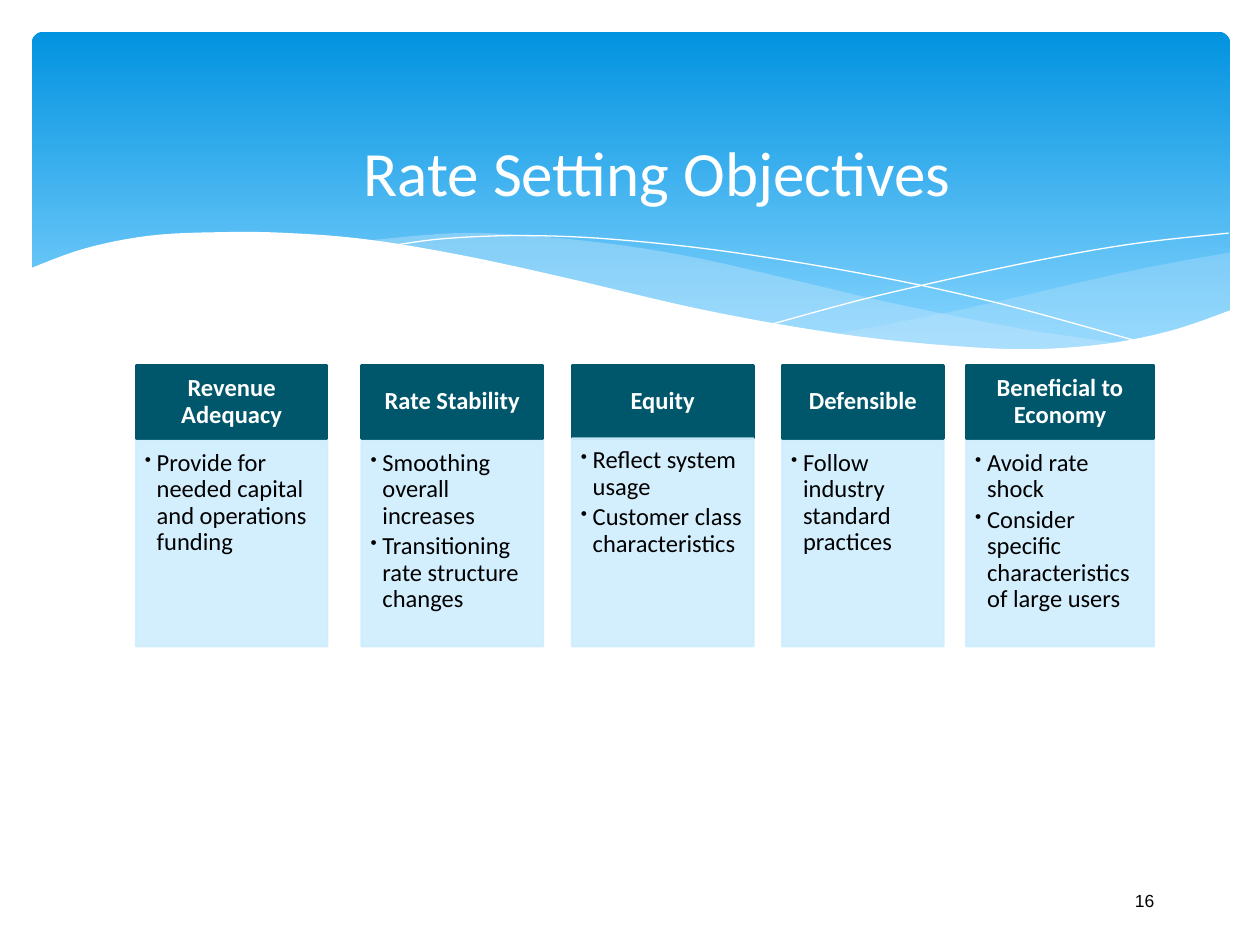
from lxml import etree
from pptx import Presentation
from pptx.dml.color import RGBColor
from pptx.enum.shapes import MSO_SHAPE
from pptx.enum.text import MSO_ANCHOR, PP_ALIGN
from pptx.oxml.ns import qn
from pptx.util import Cm, Pt

CENTER, LEFT = PP_ALIGN.CENTER, PP_ALIGN.LEFT
TOP, MIDDLE, BOTTOM = MSO_ANCHOR.TOP, MSO_ANCHOR.MIDDLE, MSO_ANCHOR.BOTTOM

WHITE = RGBColor(0xFF, 0xFF, 0xFF)
BLACK = RGBColor(0x00, 0x00, 0x00)
SKY_DARK = RGBColor(0x02, 0x93, 0xE0)
SKY_LIGHT = RGBColor(0x83, 0xD3, 0xFE)
WAVE = RGBColor(0xC6, 0xE7, 0xFC)
TEAL = RGBColor(0x00, 0x57, 0x6C)
PALE = RGBColor(0xCF, 0xED, 0xFD)

# Curves hold points in cm from the top left corner of the banner.
RIGHT_WAVE = [
    [(24.16, 4.45), (22.76, 4.7), (21.23, 5.03), (19.15, 5.51), (17.3, 5.89),
     (16.15, 6.1)],
    [(16.15, 6.1), (17.27, 6.25), (18.59, 6.38), (20.04, 6.43), (21.51, 6.32),
     (22.94, 6.05), (24.16, 5.64)],
]
LEFT_WAVE = [
    [(22.05, 6.3), (19.86, 5.97), (17.3, 5.46), (15.34, 5), (13.46, 4.57),
     (11.79, 4.29), (10.03, 4.11), (8.53, 4.06), (6.63, 4.22)],
    [(6.63, 4.22), (8.56, 4.52), (10.77, 5), (13.74, 5.66), (15.88, 6.07),
     (17.7, 6.32), (19.58, 6.43), (20.9, 6.4), (22.05, 6.3)],
]
FALLING_LINE = [
    [(7.21, 4.32), (8.33, 4.17), (9.93, 4.11), (11.79, 4.19), (14.15, 4.45),
     (17.02, 4.93), (19.56, 5.49), (22.4, 6.27)],
]
RISING_LINE = [
    [(14.94, 5.89), (17.02, 5.33), (19.84, 4.7), (22.1, 4.29), (24.13, 4.06)],
]
WHITE_WAVE = [
    [(24.18, 5.61), (22.99, 6.02), (21.59, 6.3), (19.91, 6.4), (17.81, 6.27),
     (15.82, 6.02), (13.46, 5.59), (10.72, 4.95), (8.64, 4.5), (6.78, 4.19),
     (5.21, 4.06), (3.86, 4.04), (2.39, 4.11), (1.07, 4.37), (-0.05, 4.78)],
    [(-0.05, 7.72), (24.18, 7.72)],
]

# Left, width, body top, heading, bullets
OBJECTIVES = [
    (2.74, 3.86, 8.89, "Revenue Adequacy",
     ["Provide for needed capital and operations funding"]),
    (7.29, 3.66, 8.89, "Rate Stability",
     ["Smoothing overall increases", "Transitioning rate structure changes"]),
    (11.53, 3.66, 8.84, "Equity",
     ["Reflect system usage", "Customer class characteristics"]),
    (15.77, 3.25, 8.89, "Defensible",
     ["Follow industry standard practices"]),
    (19.48, 3.78, 8.89, "Beneficial to Economy",
     ["Avoid rate shock", "Consider specific characteristics of large users"]),
]
HEAD_TOP, HEAD_HEIGHT, BODY_BOTTOM = 7.37, 1.47, 13.03


def smooth_curve(knots, steps=6):
    """Return points on a Catmull-Rom spline through the knots."""
    ends = [knots[0], *knots, knots[-1]]
    points = [knots[0]]
    for a, b, c, d in zip(ends, ends[1:], ends[2:], ends[3:]):
        for i in range(1, steps + 1):
            t = i / steps
            points.append(tuple(
                (2 * q + (r - p) * t + (2 * p - 5 * q + 4 * r - s) * t ** 2
                 + (3 * q - p - 3 * r + s) * t ** 3) / 2
                for p, q, r, s in zip(a, b, c, d)))
    return points


def set_alpha(fill_parent, percent):
    color = fill_parent.find(qn("a:solidFill")).find(qn("a:srgbClr"))
    etree.SubElement(color, qn("a:alpha"), val=str(percent * 1000))


def add_curves(s, left, top, curves, fill=None, alpha=100):
    """Draw a filled outline, or an open white hairline when fill is None."""
    points = [(Cm(x), Cm(y)) for c in curves for x, y in smooth_curve(c)]
    builder = s.shapes.build_freeform(*points[0], scale=1.0)
    builder.add_line_segments(points[1:], close=fill is not None)
    sp = builder.convert_to_shape(Cm(left), Cm(top))
    sp.shadow.inherit = False
    if fill is None:
        sp.fill.background()
        sp.line.color.rgb = WHITE
        sp.line.width = Pt(0)
        return
    sp.fill.solid()
    sp.fill.fore_color.rgb = fill
    sp.line.fill.background()
    if alpha < 100:
        set_alpha(sp._element.spPr, alpha)


def add_banner(s, left, top, width, height):
    sp = s.shapes.add_shape(MSO_SHAPE.ROUNDED_RECTANGLE, Cm(left), Cm(top),
                            Cm(width), Cm(height))
    sp.adjustments[0] = 0.034
    sp.shadow.inherit = False
    sp.line.fill.background()
    sp.fill.gradient()
    sp.fill.gradient_angle = 270
    stops = [(0, SKY_DARK), (0.9, SKY_LIGHT)]
    for stop, (position, color) in zip(sp.fill.gradient_stops, stops):
        stop.position = position
        stop.color.rgb = color
    add_curves(s, left, top, RIGHT_WAVE, WAVE, 29)
    add_curves(s, left, top, LEFT_WAVE, WAVE, 40)
    add_curves(s, left, top, FALLING_LINE)
    add_curves(s, left, top, RISING_LINE)
    add_curves(s, left, top, WHITE_WAVE, WHITE)


def set_text(sp, lines, font, align, anchor, insets=(0.25, 0.13, 0.25, 0.13),
             **spacing):
    tf = sp.text_frame
    frame = dict(zip(("margin_left", "margin_top", "margin_right",
                      "margin_bottom"), map(Cm, insets)))
    frame.update(word_wrap=True, vertical_anchor=anchor)
    for name, value in frame.items():
        setattr(tf, name, value)
    for i, line in enumerate(lines):
        p = tf.add_paragraph() if i else tf.paragraphs[0]
        p.alignment = align
        for name, value in spacing.items():
            setattr(p, name, value)
        r = p.add_run()
        r.text = line
        for name, value in font.items():
            if name == "color":
                r.font.color.rgb = value
            else:
                setattr(r.font, name, value)


def add_label(s, left, top, width, height, text, font, anchor):
    sp = s.shapes.add_textbox(Cm(left), Cm(top), Cm(width), Cm(height))
    set_text(sp, [text], font, CENTER, anchor)


def add_panel(s, left, top, width, height, color):
    sp = s.shapes.add_shape(MSO_SHAPE.RECTANGLE, Cm(left), Cm(top),
                            Cm(width), Cm(height))
    sp.shadow.inherit = False
    sp.fill.solid()
    sp.fill.fore_color.rgb = color
    sp.line.color.rgb = color
    sp.line.width = Pt(1.25)
    return sp


def add_bullets(tf):
    for p in tf.paragraphs:
        pPr = p._p.get_or_add_pPr()
        pPr.set("marL", str(Cm(0.24)))
        pPr.set("indent", str(Cm(-0.24)))
        etree.SubElement(pPr, qn("a:buSzPct"), val="75000")
        etree.SubElement(pPr, qn("a:buChar"), char="•")


def add_objective(s, left, width, body_top, heading, bullets):
    font = {"name": "Calibri", "size": Pt(14)}
    head = add_panel(s, left, HEAD_TOP, width, HEAD_HEIGHT, TEAL)
    set_text(head, [heading], {**font, "bold": True, "color": WHITE}, CENTER,
             MIDDLE, (0.2, 0.13, 0.2, 0.13), line_spacing=0.9)
    body = add_panel(s, left, body_top, width, BODY_BOTTOM - body_top, PALE)
    set_alpha(body._element.spPr, 90)
    set_alpha(body.line._get_or_add_ln(), 90)
    set_text(body, bullets, {**font, "color": BLACK}, LEFT, TOP,
             (0.18, 0.18, 0.23, 0.25), level=1, line_spacing=0.9,
             space_after=Pt(2.5))
    add_bullets(body.text_frame)


def main():
    prs = Presentation()
    prs.slide_width, prs.slide_height = Cm(25.4), Cm(19.05)
    s = prs.slides.add_slide(prs.slide_layouts[6])
    add_banner(s, 0.64, 0.64, 24.16, 6.86)
    add_label(s, 2.11, 0.99, 22.56, 3.35, "Rate Setting Objectives ",
              {"name": "Calibri", "size": Pt(36), "color": WHITE}, BOTTOM)
    add_label(s, 22.02, 17.65, 2.11, 1.02, "16",
              {"name": "Arial", "size": Pt(10), "color": BLACK}, MIDDLE)
    for objective in OBJECTIVES:
        add_objective(s, *objective)
    prs.save("out.pptx")


if __name__ == "__main__":
    main()
